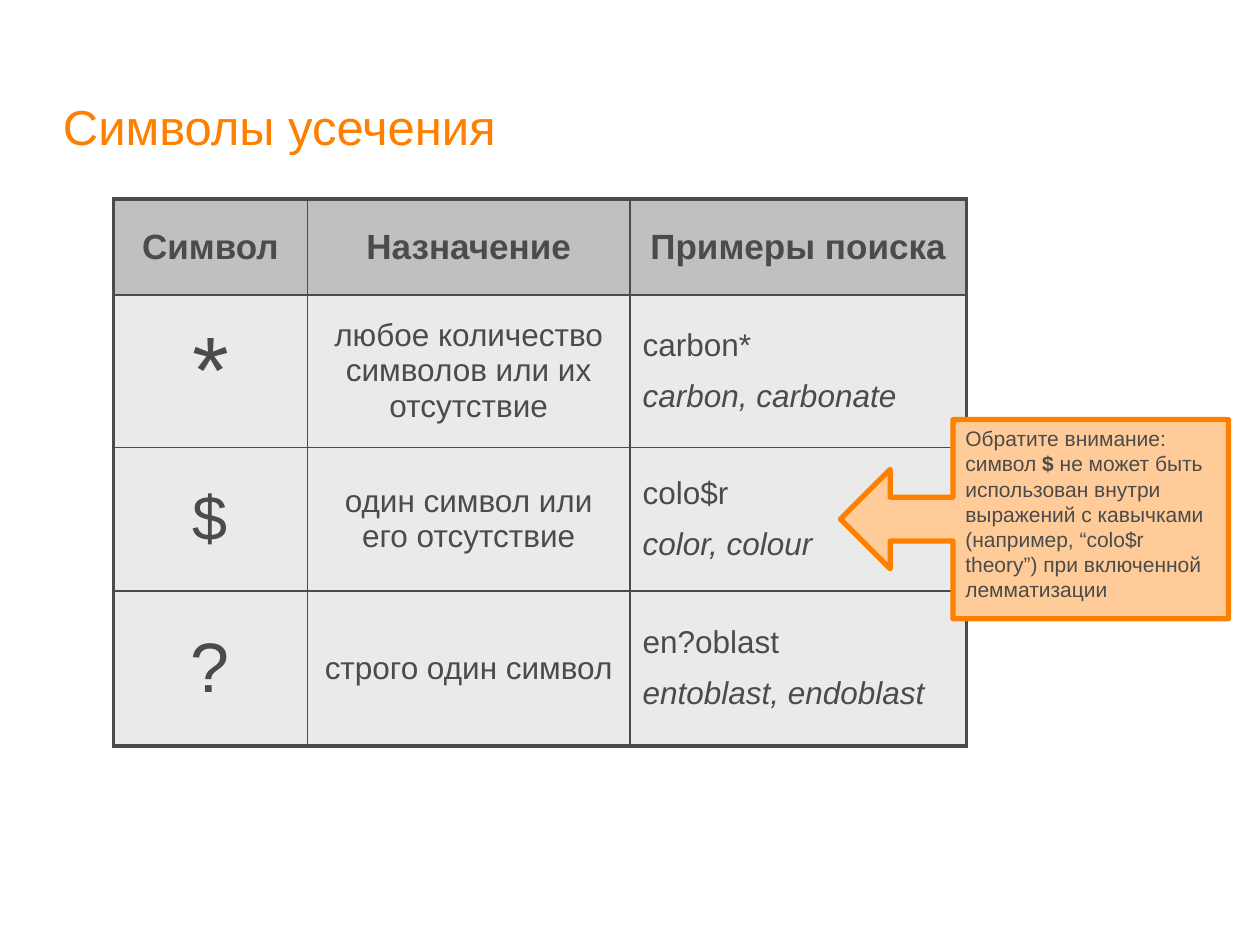
import pptx
import pptx.dml.color
import pptx.enum.shapes
import pptx.enum.text
import pptx.oxml
import pptx.oxml.ns
import pptx.util
from dataclasses import dataclass

# The slide is a grid of 1000 columns by 750 rows
COLUMNS, ROWS = 1000, 750
GRID_STEP = pptx.util.Inches(0.01)
FONT = "Arial"
ORANGE, PEACH, INK = "FF8000", "FFCC99", "4B4B4B"
HEADER_GREY, BODY_GREY = "C0C0C0", "EAEAEA"
OUTER_LINE, INNER_LINE = 2.25, 1
CENTER = pptx.enum.text.PP_ALIGN.CENTER
LEFT = pptx.enum.text.PP_ALIGN.LEFT
ANCHOR = pptx.enum.text.MSO_ANCHOR


@dataclass(frozen=True)
class Box:
    column: int
    row: int
    columns: int
    rows: int

    def emu(self) -> list[int]:
        return [n * GRID_STEP for n in (self.column, self.row, self.columns, self.rows)]


@dataclass(frozen=True)
class Run:
    text: str
    size: int
    color: str = INK
    bold: bool = False
    italic: bool = False


@dataclass(frozen=True)
class Wildcard:
    symbol: str
    symbol_size: int
    purpose: str
    query: str
    matches: str


def rgb(color: str) -> pptx.dml.color.RGBColor:
    return pptx.dml.color.RGBColor.from_string(color)


def paint(fill, color: str) -> None:
    fill.solid()
    fill.fore_color.rgb = rgb(color)


def write(frame, paragraphs: list[list[Run]], align=LEFT) -> None:
    """Fill a text frame run by run, half a line between paragraphs."""
    frame.word_wrap = True
    for index, runs in enumerate(paragraphs):
        paragraph = frame.add_paragraph() if index else frame.paragraphs[0]
        paragraph.alignment = align
        if index:
            paragraph.space_before = pptx.util.Pt(runs[0].size / 2)
        for part in runs:
            run = paragraph.add_run()
            run.text = part.text
            run.font.name = FONT
            run.font.size = pptx.util.Pt(part.size)
            run.font.bold = part.bold
            run.font.italic = part.italic
            run.font.color.rgb = rgb(part.color)


def draw_border(cell, side: str, width: float) -> None:
    line = pptx.oxml.parse_xml(
        f'<a:{side} {pptx.oxml.ns.nsdecls("a")} w="{pptx.util.Pt(width)}">'
        f'<a:solidFill><a:srgbClr val="{INK}"/></a:solidFill></a:{side}>'
    )
    cell._tc.get_or_add_tcPr().append(line)


def draw_title(slide, box: Box, text: str) -> None:
    frame = slide.shapes.add_textbox(*box.emu()).text_frame
    frame.margin_left = frame.margin_right = frame.margin_top = frame.margin_bottom = 0
    frame.vertical_anchor = ANCHOR.BOTTOM
    write(frame, [[Run(text, 28, ORANGE)]])
    frame.paragraphs[0].line_spacing = 0.9


def draw_table(slide, column: int, row: int, widths: list[int], heights: list[int],
               contents: list[list[list[list[Run]]]]) -> None:
    box = Box(column, row, sum(widths), sum(heights))
    table = slide.shapes.add_table(len(heights), len(widths), *box.emu()).table
    table.horz_banding = False
    for grid_column, width in zip(table.columns, widths):
        grid_column.width = width * GRID_STEP
    for grid_row, height in zip(table.rows, heights):
        grid_row.height = height * GRID_STEP

    last_row, last_column = len(heights) - 1, len(widths) - 1
    for r, cells in enumerate(contents):
        for c, paragraphs in enumerate(cells):
            cell = table.cell(r, c)
            cell.vertical_anchor = ANCHOR.MIDDLE
            # Outer edges are heavier than inner ones
            edges = {"lnL": c == 0, "lnR": c == last_column,
                     "lnT": r == 0, "lnB": r == last_row}
            for side, is_outer in edges.items():
                draw_border(cell, side, OUTER_LINE if is_outer else INNER_LINE)
            paint(cell.fill, BODY_GREY if r else HEADER_GREY)
            is_example = r > 0 and c == last_column
            write(cell.text_frame, paragraphs, LEFT if is_example else CENTER)


def draw_callout(slide, box: Box, runs: list[Run]) -> None:
    kind = pptx.enum.shapes.MSO_SHAPE.LEFT_ARROW_CALLOUT
    callout = slide.shapes.add_shape(kind, *box.emu())
    callout.shadow.inherit = False
    for index, share in enumerate((0.22, 0.25, 0.25, 0.71)):
        callout.adjustments[index] = share
    paint(callout.fill, PEACH)
    paint(callout.line.fill, ORANGE)
    callout.line.width = pptx.util.Pt(3)
    callout.text_frame.vertical_anchor = ANCHOR.TOP
    write(callout.text_frame, [runs])


HEADINGS = ["Символ", "Назначение", "Примеры поиска"]
WILDCARDS = [
    Wildcard("*", 54, "любое количество символов или их отсутствие",
             "carbon*", "carbon, carbonate"),
    Wildcard("$", 36, "один символ или его отсутствие",
             "colo$r", "color, colour"),
    Wildcard("?", 40, "строго один символ",
             "en?oblast", "entoblast, endoblast"),
]
WARNING = [
    Run("Обратите внимание: символ ", 12),
    Run("$ ", 12, bold=True),
    Run("не может быть использован внутри выражений с кавычками "
        "(например, “colo$r theory”) при включенной лемматизации", 12),
]


def main() -> None:
    deck = pptx.Presentation()
    deck.slide_width = COLUMNS * GRID_STEP
    deck.slide_height = ROWS * GRID_STEP
    slide = deck.slides.add_slide(deck.slide_layouts[6])

    draw_title(slide, Box(50, 74, 900, 50), "Символы усечения")

    # Header row, then one row per wildcard
    contents = [[[[Run(heading, 20, bold=True)]] for heading in HEADINGS]]
    for wildcard in WILDCARDS:
        contents.append([
            [[Run(wildcard.symbol, wildcard.symbol_size)]],
            [[Run(wildcard.purpose, 18)]],
            [[Run(wildcard.query, 18)], [Run(wildcard.matches, 18, italic=True)]],
        ])
    draw_table(slide, 90, 158, [154, 256, 267], [76, 121, 114, 123], contents)

    # Warning that points at the "$" row
    draw_callout(slide, Box(667, 333, 308, 158), WARNING)

    deck.save("out.pptx")


if __name__ == "__main__":
    main()
